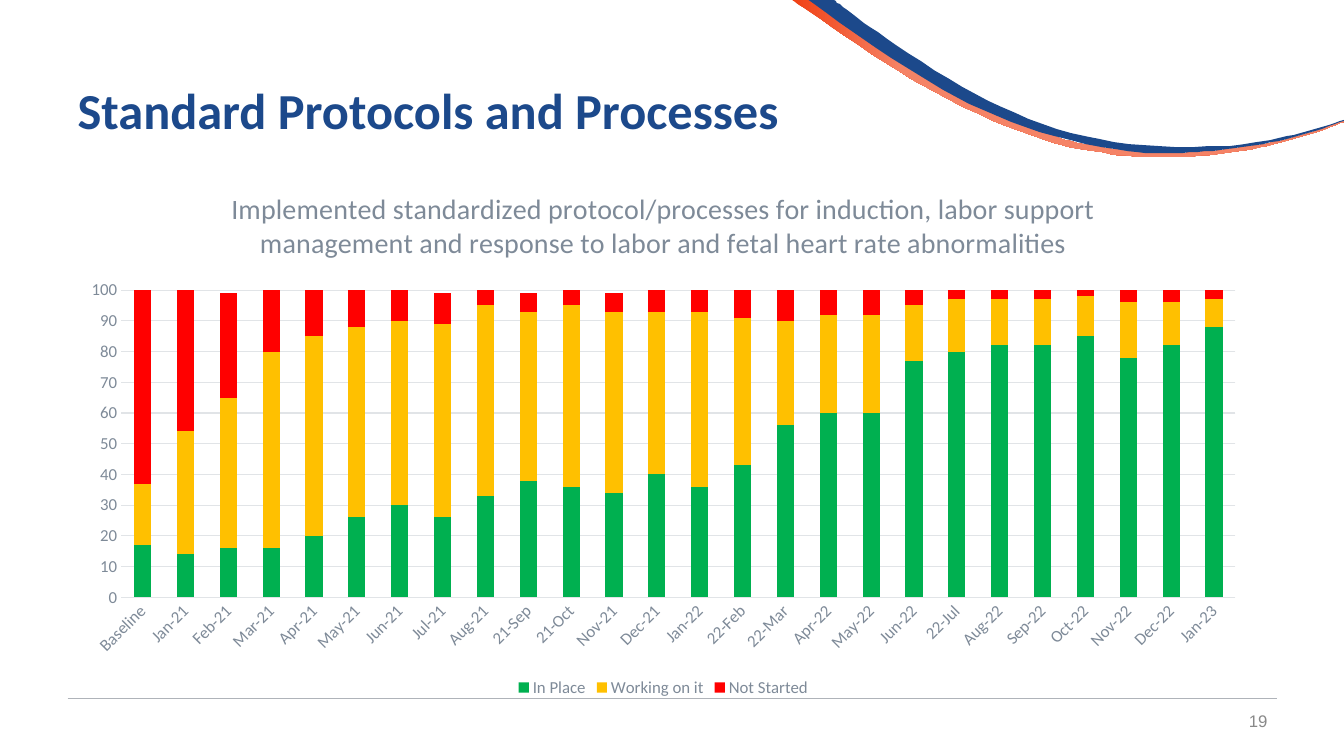
"""Build the slide on standard protocols with a stacked column chart."""
from lxml import etree
from pptx import Presentation
from pptx.chart.data import CategoryChartData
from pptx.dml.color import RGBColor
from pptx.enum.chart import XL_CHART_TYPE, XL_LEGEND_POSITION, XL_TICK_MARK
from pptx.enum.shapes import MSO_CONNECTOR
from pptx.enum.text import MSO_ANCHOR, PP_ALIGN
from pptx.oxml import parse_xml
from pptx.oxml.ns import nsdecls, qn
from pptx.util import Pt

PX = 9144
STACKED = XL_CHART_TYPE.COLUMN_STACKED
BOTTOM = XL_LEGEND_POSITION.BOTTOM
NO_TICK = XL_TICK_MARK.NONE
STRAIGHT = MSO_CONNECTOR.STRAIGHT
MIDDLE = MSO_ANCHOR.MIDDLE
LEFT, RIGHT = PP_ALIGN.LEFT, PP_ALIGN.RIGHT

NAVY = RGBColor(0x1C, 0x49, 0x8B)
ORANGE = RGBColor(0xF0, 0x41, 0x15)
SALMON = RGBColor(0xF5, 0x83, 0x66)
RULE_GRAY = RGBColor(0xAF, 0xB3, 0xB9)
NUMBER_GRAY = RGBColor(0x89, 0x89, 0x89)
LABEL_GRAY = RGBColor(0x7E, 0x8A, 0x98)
GRID_GRAY = RGBColor(0xE1, 0xE4, 0xE7)
GREEN = RGBColor(0x00, 0xB0, 0x50)
AMBER = RGBColor(0xFF, 0xC0, 0x00)
RED = RGBColor(0xFF, 0x00, 0x00)

ORANGE_TOP = [(805, 0), (810, 4), (882, 54), (958, 99), (1039, 133), (1081, 144), (1125, 150),
              (1168, 152), (1212, 149), (1256, 143), (1299, 132), (1333, 120)]
ORANGE_BOTTOM = [(1333, 121), (1299, 133), (1256, 145), (1213, 152), (1169, 156), (1124, 155),
                 (1080, 149), (1037, 139), (955, 106), (878, 62), (804, 12), (786, 0)]
NAVY_TOP = [(827, 0), (843, 12), (879, 38), (954, 86), (1034, 123), (1120, 143),
            (1209, 145), (1253, 140), (1297, 130), (1333, 119)]
NAVY_BOTTOM = [(1333, 120), (1297, 132), (1253, 143), (1209, 149), (1164, 152), (1119, 150),
               (1031, 131), (948, 96), (871, 49), (802, 0)]

MONTHS = ["Baseline", "Jan-21", "Feb-21", "Mar-21", "Apr-21", "May-21", "Jun-21", "Jul-21", "Aug-21",
          "21-Sep", "21-Oct", "Nov-21", "Dec-21", "Jan-22", "22-Feb", "22-Mar", "Apr-22", "May-22",
          "Jun-22", "22-Jul", "Aug-22", "Sep-22", "Oct-22", "Nov-22", "Dec-22", "Jan-23"]
STATUSES = [
    ("In Place", GREEN, [17, 14, 16, 16, 20, 26, 30, 26, 33, 38, 36, 34, 40,
                         36, 43, 56, 60, 60, 77, 80, 82, 82, 85, 78, 82, 88]),
    ("Working on it", AMBER, [20, 40, 49, 64, 65, 62, 60, 63, 62, 55, 59, 59, 53,
                              57, 48, 34, 32, 32, 18, 17, 15, 15, 13, 18, 14, 9]),
    ("Not Started", RED, [63, 46, 34, 21, 15, 12, 10, 10, 5, 6, 5, 6, 7,
                          7, 10, 10, 8, 8, 5, 3, 4, 3, 2, 4, 4, 3]),
]


def style_font(font, name, size, color, bold=False):
    """Set the face, size, colour and weight of a font."""
    font.name, font.size, font.bold = name, Pt(size), bold
    font.color.rgb = color


def smooth_edge(anchors, steps=6):
    """Return points on a smooth curve through the anchors."""
    padded = [anchors[0], *anchors, anchors[-1]]
    points = [anchors[0]]
    for a, b, c, d in zip(padded, padded[1:], padded[2:], padded[3:]):
        for step in range(1, steps + 1):
            t = step / steps
            points.append(tuple(
                q + t * (r - p) / 2 + t**2 * (2 * p - 5 * q + 4 * r - s) / 2
                + t**3 * (3 * q - p - 3 * r + s) / 2
                for p, q, r, s in zip(a, b, c, d)))
    return points


deck = Presentation()
deck.slide_width, deck.slide_height = 1333 * PX, 750 * PX
page = deck.slides.add_slide(deck.slide_layouts[5])

ribbons = []
for top, bottom in ((ORANGE_TOP, ORANGE_BOTTOM), (NAVY_TOP, NAVY_BOTTOM)):
    outline = smooth_edge(top) + smooth_edge(bottom)
    builder = page.shapes.build_freeform(*outline[0], scale=PX)
    builder.add_line_segments(outline[1:], close=True)
    ribbon = builder.convert_to_shape()
    ribbon.shadow.inherit = False
    ribbon.line.fill.background()
    ribbons.append(ribbon)
orange_ribbon, navy_ribbon = ribbons
orange_ribbon.fill.gradient()
orange_ribbon.fill.gradient_angle = 0
for stop, color, position in zip(orange_ribbon.fill.gradient_stops, (ORANGE, SALMON), (0, 0.2)):
    stop.color.rgb, stop.position = color, position
navy_ribbon.fill.solid()
navy_ribbon.fill.fore_color.rgb = NAVY

footer_rule = page.shapes.add_connector(STRAIGHT, 67 * PX, 693 * PX, 1267 * PX, 693 * PX)
footer_rule.line.color.rgb = RULE_GRAY
footer_rule.line.width = Pt(0.5)
etree.SubElement(footer_rule._element.spPr, qn("a:effectLst"))

number_box = page.shapes.add_textbox(967 * PX, 695 * PX, 300 * PX, 40 * PX)
number_box.text_frame.word_wrap = True
number_box.text_frame.vertical_anchor = MIDDLE
number_box.text_frame.text = "19"
number_para = number_box.text_frame.paragraphs[0]
number_para.alignment = RIGHT
style_font(number_para.runs[0].font, "Arial", 12, NUMBER_GRAY)

title = page.shapes.title
title.left, title.top, title.width, title.height = 67 * PX, 40 * PX, 1200 * PX, 145 * PX
title.text_frame.text = "Standard Protocols and Processes"
title.text_frame.vertical_anchor = MIDDLE
title_para = title.text_frame.paragraphs[0]
title_para.alignment = LEFT
title_para.line_spacing = 0.9
style_font(title_para.runs[0].font, "Calibri", 36, NAVY, bold=True)

chart_data = CategoryChartData()
chart_data.categories = MONTHS
for name, color, values in STATUSES:
    chart_data.add_series(name, values)
chart = page.shapes.add_chart(STACKED, 67 * PX, 166 * PX, 1182 * PX, 530 * PX, chart_data).chart
style_font(chart.font, "Calibri", 12, LABEL_GRAY)

chart.has_title = True
chart.chart_title.include_in_layout = False
chart.chart_title.text_frame.text = (
    "Implemented standardized protocol/processes for induction, labor support "
    "management and response to labor and fetal heart rate abnormalities")
style_font(chart.chart_title.text_frame.paragraphs[0].runs[0].font, "Calibri", 20, LABEL_GRAY)

chart.has_legend = True
chart.legend.position = BOTTOM
chart.legend.include_in_layout = False
style_font(chart.legend.font, "Calibri", 12, LABEL_GRAY)

plot = chart.plots[0]
plot.gap_width, plot.overlap = 150, 100
plot.vary_by_categories = False
for series, (name, color, values) in zip(plot.series, STATUSES):
    series.format.fill.solid()
    series.format.fill.fore_color.rgb = color
    series.invert_if_negative = False

months_axis, percent_axis = chart.category_axis, chart.value_axis
for axis in (months_axis, percent_axis):
    axis.major_tick_mark = axis.minor_tick_mark = NO_TICK
    style_font(axis.tick_labels.font, "Calibri", 12, LABEL_GRAY)
months_axis._element.txPr.bodyPr.set("rot", "-2700000")
percent_axis.minimum_scale, percent_axis.maximum_scale = 0, 100
percent_axis.major_unit = 10
percent_axis.has_major_gridlines = True
percent_axis.format.line.fill.background()
for line in (months_axis.format.line, percent_axis.major_gridlines.format.line):
    line.color.rgb = GRID_GRAY
    line.width = Pt(0.75)

plot_area = chart._chartSpace.chart.plotArea
for old_layout in plot_area.findall(qn("c:layout")):
    plot_area.remove(old_layout)
plot_area.insert(0, parse_xml(
    f'<c:layout {nsdecls("c")}><c:manualLayout><c:layoutTarget val="inner"/>'
    '<c:xMode val="edge"/><c:yMode val="edge"/><c:x val="0.045"/><c:y val="0.23"/>'
    '<c:w val="0.935"/><c:h val="0.575"/></c:manualLayout></c:layout>'))

deck.save("out.pptx")
